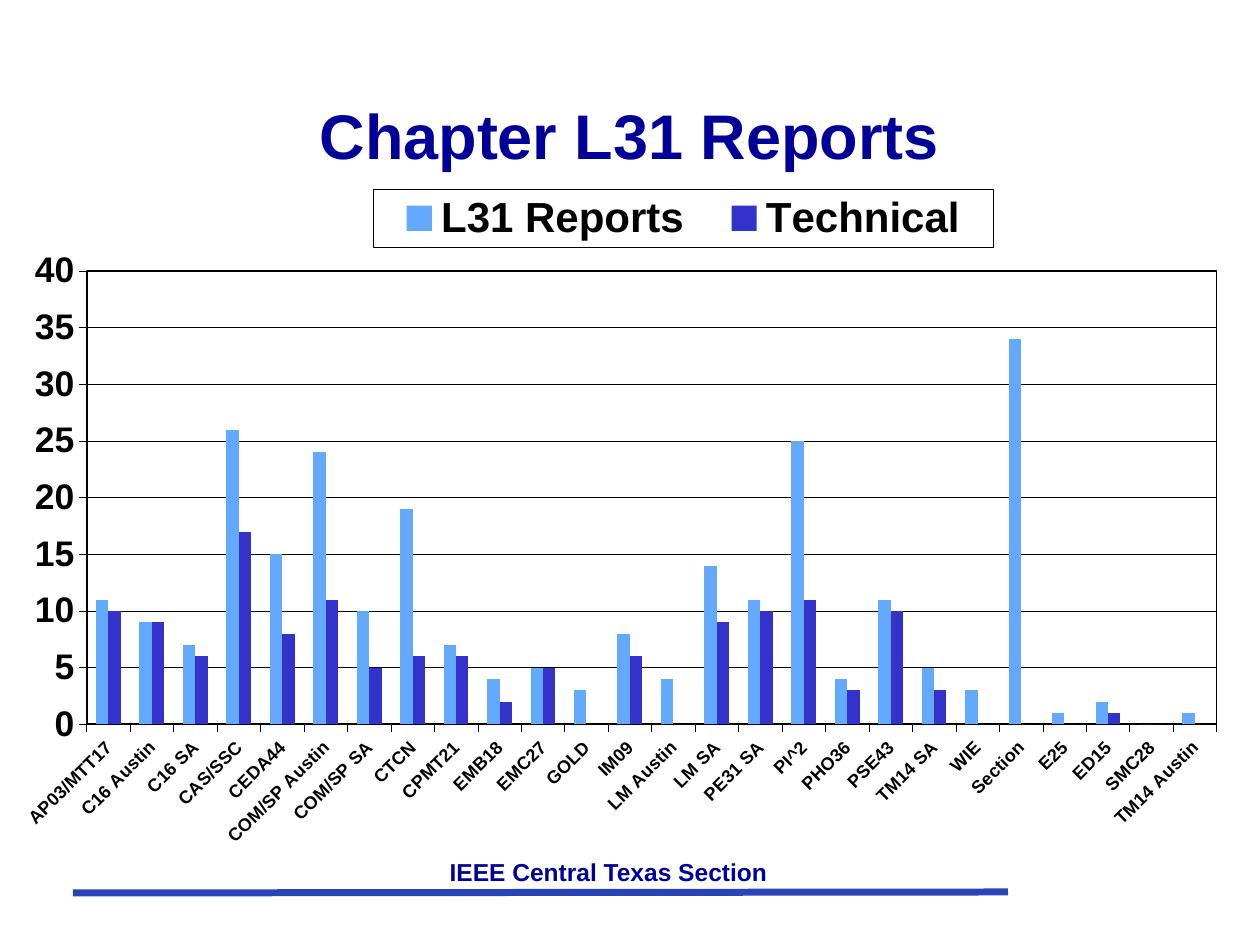
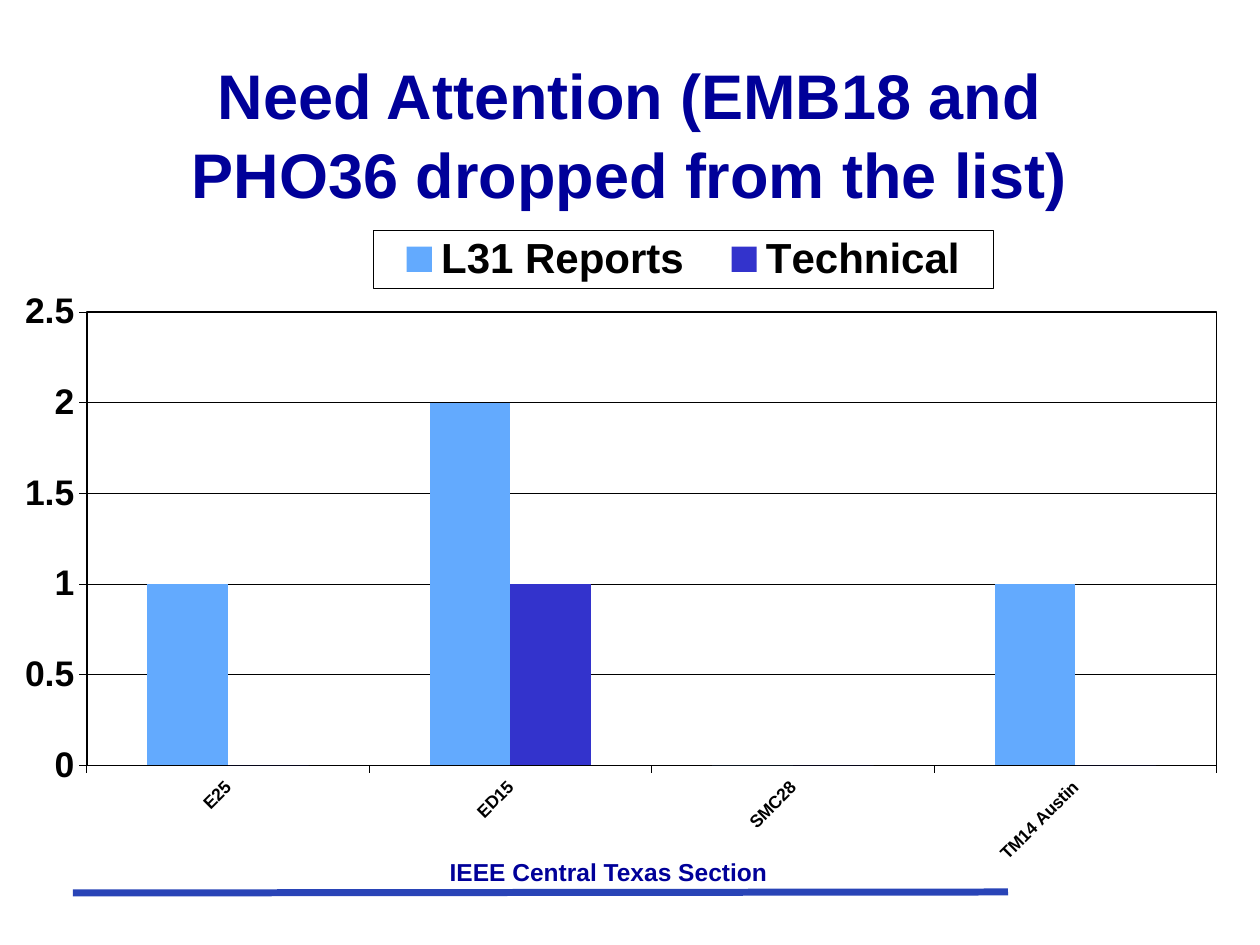
"""Builds two chapter report slides with column charts and a shared footer."""
from lxml import etree
from pptx import Presentation
from pptx.chart.data import CategoryChartData
from pptx.dml.color import RGBColor as RGB
from pptx.enum.chart import XL_CHART_TYPE as KIND, XL_LEGEND_POSITION as SIDE
from pptx.enum.chart import XL_TICK_LABEL_POSITION as LABEL, XL_TICK_MARK as TICK
from pptx.enum.shapes import MSO_CONNECTOR as LINE
from pptx.enum.text import MSO_ANCHOR as ANCHOR, MSO_AUTO_SIZE as FIT, PP_ALIGN as ALIGN
from pptx.oxml import parse_xml
from pptx.oxml.ns import qn
from pptx.util import Pt

PX = 914400 / 126
FONT = "Arial"
HEX = {"navy": "000099", "rule": "2944B7", "ink": "000000",
       "L31 Reports": "63AAFE", "Technical": "3333CC"}
NS = ('xmlns:c="http://schemas.openxmlformats.org/drawingml/2006/chart" '
      'xmlns:a="http://schemas.openxmlformats.org/drawingml/2006/main"')


def write(shape, text, size, anchor=ANCHOR.TOP, space=1.0):
    """Fill a shape with centred bold navy text."""
    frame = shape.text_frame
    frame.text = text
    frame.word_wrap = True
    frame.auto_size = FIT.NONE
    frame.vertical_anchor = anchor
    para = frame.paragraphs[0]
    para.alignment = ALIGN.CENTER
    para.line_spacing = space
    font = para.runs[0].font
    font.name, font.size, font.bold = FONT, Pt(size), True
    font.color.rgb = RGB.from_string(HEX["navy"])


def frame(part, at, spot, width, inner=""):
    """Place a chart part by fractions and return its border properties."""
    for old in part.findall(qn("c:layout")):
        part.remove(old)
    size = "".join(f'<c:{key} val="{val}"/>' for key, val in zip("xywh", spot))
    part.insert(at, parse_xml(
        f'<c:layout {NS}><c:manualLayout>{inner}<c:xMode val="edge"/>'
        f'<c:yMode val="edge"/>{size}</c:manualLayout></c:layout>'))
    return parse_xml(
        f'<c:spPr {NS}><a:noFill/><a:ln w="{Pt(width)}"><a:solidFill>'
        f'<a:srgbClr val="{HEX["ink"]}"/></a:solidFill></a:ln></c:spPr>')


pages = [
    {"title": "Chapter L31 Reports", "top": 189, "label": 10.3, "max": 40, "step": 5,
     "rows": [("AP03/MTT17", 11, 10), ("C16 Austin", 9, 9), ("C16 SA", 7, 6),
              ("CAS/SSC", 26, 17), ("CEDA44", 15, 8), ("COM/SP Austin", 24, 11),
              ("COM/SP SA", 10, 5), ("CTCN", 19, 6), ("CPMT21", 7, 6),
              ("EMB18", 4, 2), ("EMC27", 5, 5), ("GOLD", 3, 0), ("IM09", 8, 6),
              ("LM Austin", 4, 0), ("LM SA", 14, 9), ("PE31 SA", 11, 10),
              ("PI^2", 25, 11), ("PHO36", 4, 3), ("PSE43", 11, 10),
              ("TM14 SA", 5, 3), ("WIE", 3, 0), ("Section", 34, 0),
              ("E25", 1, 0), ("ED15", 2, 1), ("SMC28", 0, 0), ("TM14 Austin", 1, 0)]},
    {"title": "Need Attention (EMB18 and PHO36 dropped from the list)",
     "top": 230, "label": 10, "max": 2.5, "step": 0.5,
     "rows": [("E25", 1, 0), ("ED15", 2, 1), ("SMC28", 0, 0), ("TM14 Austin", 1, 0)]},
]

deck = Presentation()
deck.slide_width, deck.slide_height = int(1260 * PX), int(945 * PX)

for page in pages:
    slide = deck.slides.add_slide(deck.slide_layouts[5])

    rule = slide.shapes.add_connector(
        LINE.STRAIGHT, *(int(n * PX) for n in (73, 893, 1008, 892)))
    rule.line.width = Pt(4)
    rule.line.color.rgb = RGB.from_string(HEX["rule"])
    etree.SubElement(rule._element.spPr, qn("a:effectLst"))
    foot = slide.shapes.add_textbox(*(int(n * PX) for n in (220, 851, 777, 42)))
    write(foot, "IEEE Central Texas Section", 14)

    title = slide.shapes.title
    title.left, title.top, title.width, title.height = (
        int(n * PX) for n in (94, 53, 1071, 158))
    write(title, page["title"], 36, ANCHOR.MIDDLE, 1.05)

    names, reports, talks = zip(*page["rows"])
    data = CategoryChartData()
    data.categories = names
    data.add_series("L31 Reports", reports)
    data.add_series("Technical", talks)
    box = (int(n * PX) for n in (0, page["top"], 1239, 682))
    chart = slide.shapes.add_chart(KIND.COLUMN_CLUSTERED, *box, data).chart
    chart.has_title = False
    chart.has_legend = True
    chart.legend.position = SIDE.TOP
    chart.legend.include_in_layout = False

    plot = chart.plots[0]
    plot.gap_width, plot.overlap, plot.vary_by_categories = 150, 0, False
    for bars in plot.series:
        bars.format.fill.solid()
        bars.format.fill.fore_color.rgb = RGB.from_string(HEX[bars.name])

    base, scale = chart.category_axis, chart.value_axis
    base.tick_label_position = LABEL.LOW
    base.has_major_gridlines = False
    scale.has_major_gridlines = True
    scale.minimum_scale, scale.maximum_scale = 0, page["max"]
    scale.major_unit = page["step"]
    scale.tick_labels.number_format = "General"
    scale.tick_labels.number_format_is_linked = False
    for axis in (base, scale):
        axis.major_tick_mark, axis.minor_tick_mark = TICK.OUTSIDE, TICK.NONE
    for line in (base.format.line, scale.format.line, scale.major_gridlines.format.line):
        line.width = Pt(0.25)
        line.color.rgb = RGB.from_string(HEX["ink"])

    for font, size in ((chart.font, 26.1), (chart.legend.font, 24),
                       (base.tick_labels.font, page["label"]),
                       (scale.tick_labels.font, 20.3)):
        font.name, font.size, font.bold = FONT, Pt(size), True
        font.color.rgb = RGB.from_string(HEX["ink"])
    turn = base._element.find(qn("c:txPr")).find(qn("a:bodyPr"))
    turn.set("rot", "-2700000")
    turn.set("vert", "horz")

    area = chart._chartSpace.chart.plotArea
    area.append(frame(area, 0, (0.07, 0.12, 0.912, 0.665), 1,
                      '<c:layoutTarget val="inner"/>'))
    key = chart.legend._element
    edge = frame(key, 1, (0.301, 0, 0.501, 0.085), 0.25)
    key.find(qn("c:txPr")).addprevious(edge)

deck.save("out.pptx")
